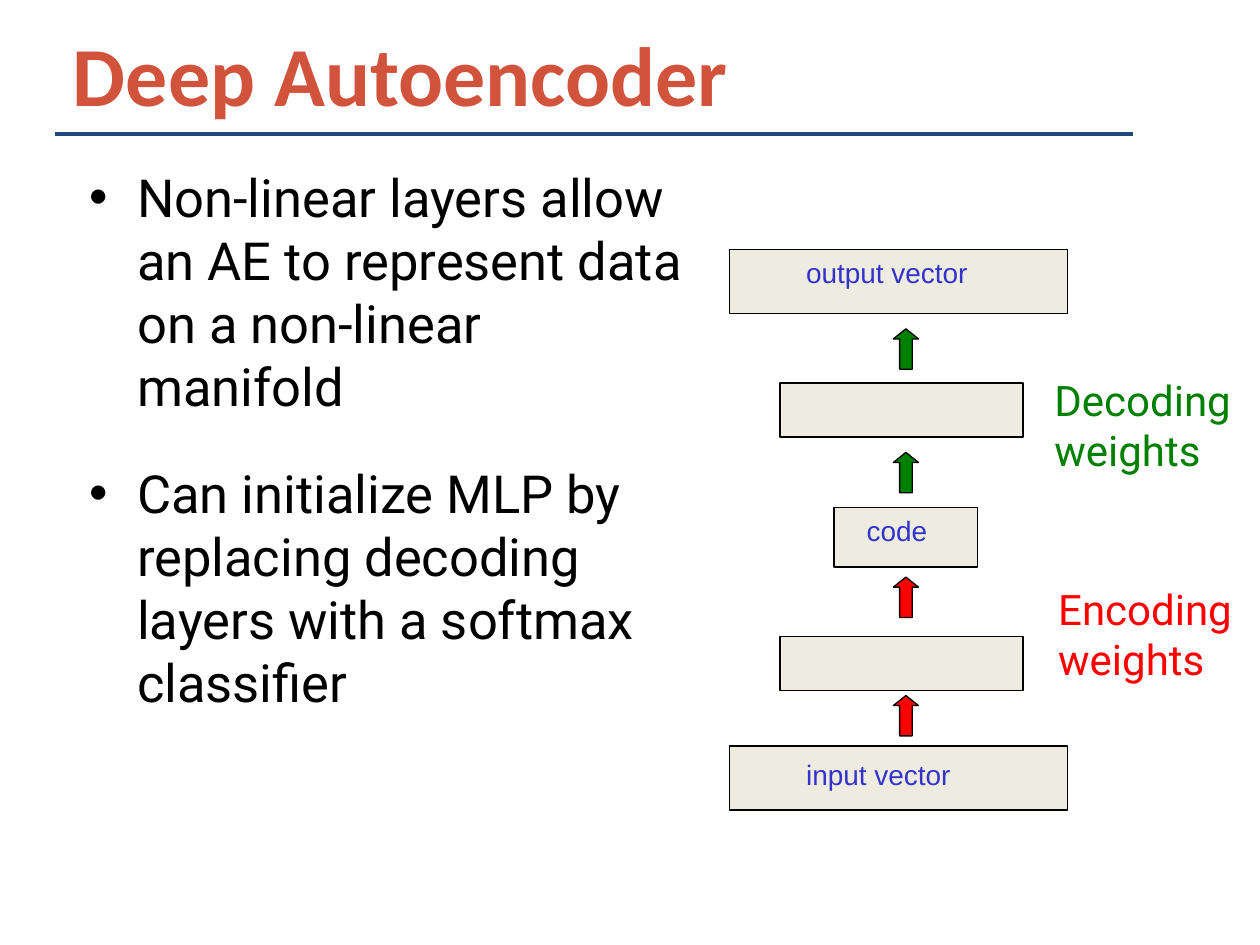
from pptx import Presentation
from pptx.dml.color import RGBColor
from pptx.enum.shapes import MSO_CONNECTOR, MSO_SHAPE
from pptx.enum.text import MSO_ANCHOR
from pptx.oxml.ns import qn
from pptx.util import Inches, Pt
from lxml import etree

RECT, UP_ARROW = MSO_SHAPE.RECTANGLE, MSO_SHAPE.UP_ARROW
STRAIGHT = MSO_CONNECTOR.STRAIGHT
TOP, MIDDLE = MSO_ANCHOR.TOP, MSO_ANCHOR.MIDDLE

BLACK = RGBColor(0x00, 0x00, 0x00)
ORANGE = RGBColor(0xD2, 0x53, 0x3B)
NAVY = RGBColor(0x1F, 0x49, 0x7D)
CREAM = RGBColor(0xEE, 0xEC, 0xE1)
BLUE = RGBColor(0x33, 0x33, 0xCC)
RED = RGBColor(0xFF, 0x00, 0x00)
GREEN = RGBColor(0x00, 0x80, 0x00)


def add_bullet(p, margin, indent):
    """Give a paragraph a round bullet and a hanging indent."""
    pPr = p._p.get_or_add_pPr()
    pPr.set("marL", str(Inches(margin)))
    pPr.set("indent", str(Inches(indent)))
    etree.SubElement(pPr, qn("a:buFont")).set("typeface", "Arial")
    etree.SubElement(pPr, qn("a:buChar")).set("char", "•")


def add_text(slide, box, *texts, size, color, font="Roboto", bold=False,
             anchor=TOP, bullets=False, gap=0):
    """Add a wrapped text box with one paragraph for each text."""
    tf = slide.shapes.add_textbox(*map(Inches, box)).text_frame
    tf.word_wrap = True
    tf.vertical_anchor = anchor
    for i, text in enumerate(texts):
        p = tf.add_paragraph() if i else tf.paragraphs[0]
        if i:
            p.space_before = Pt(gap)
        if bullets:
            add_bullet(p, 0.38, -0.44)
        r = p.add_run()
        r.text = text
        r.font.name = font
        r.font.size = Pt(size)
        r.font.bold = bold
        r.font.color.rgb = color


def add_block(slide, kind, box, fill):
    """Add a filled shape with a thin black outline."""
    sp = slide.shapes.add_shape(kind, *map(Inches, box))
    sp.shadow.inherit = False
    sp.fill.solid()
    sp.fill.fore_color.rgb = fill
    sp.line.color.rgb = BLACK
    sp.line.width = Pt(0.75)
    return sp


def add_title(slide, box, text):
    """Add the slide title with a rule along its lower edge."""
    x, y, w, h = box
    add_text(slide, (x + 0.04, y, w, h), text, size=48, color=ORANGE,
             font="Calibri", bold=True, anchor=MIDDLE)
    rule = slide.shapes.add_connector(
        STRAIGHT, *map(Inches, (x, y + h, x + w, y + h)))
    rule.line.color.rgb = NAVY
    rule.line.width = Pt(2.25)
    etree.SubElement(rule._element.spPr, qn("a:effectLst"))


def add_network(slide, box):
    """Add the layer stack, its arrows and the weight labels."""
    x, y, w, h = box
    layers = [
        (0, 0, w, 0.51, "output vector", 0.51, 0),
        (0.4, 1.06, 1.93, 0.43, "", 0, 0),
        (0.83, 2.05, 1.14, 0.47, "code", 0.16, 0),
        (0.4, 3.07, 1.93, 0.43, "", 0, 0),
        (0, h - 0.51, w, 0.51, "input vector", 0.51, 0.04),
    ]
    for dx, dy, lw, lh, text, inset, drop in layers:
        add_block(slide, RECT, (x + dx, y + dy, lw, lh), CREAM)
        if text:
            add_text(slide, (x + inset + dx, y + dy + drop, lw - inset, 0.49),
                     text, size=16, color=BLUE, font="Arial")
    for dy, color in ((0.63, GREEN), (1.61, GREEN), (2.6, RED), (3.54, RED)):
        arrow = add_block(slide, UP_ARROW, (x + 1.3, y + dy, 0.2, 0.32), color)
        arrow.adjustments[1] = 0.4
    for dx, dy, text, color in ((2.48, 0.94, "Decoding weights", GREEN),
                                (2.51, 2.6, "Encoding weights", RED)):
        add_text(slide, (x + dx, y + dy, 1.7, 0.94), text, size=24, color=color)


def main():
    """Build the slide and save it."""
    prs = Presentation()
    prs.slide_width, prs.slide_height = Inches(10), Inches(7.5)
    s = prs.slides.add_slide(prs.slide_layouts[6])
    add_title(s, (0.44, 0.1, 8.55, 0.96), "Deep Autoencoder")
    add_text(
        s, (0.61, 1.26, 4.95, 6.04),
        "Non-linear layers allow an AE to represent data on a non-linear manifold",
        "Can initialize MLP by replacing decoding layers with a softmax classifier",
        size=30, color=BLACK, bullets=True, gap=25)
    add_network(s, (5.79, 1.98, 2.68, 4.45))
    prs.save("out.pptx")


if __name__ == "__main__":
    main()
